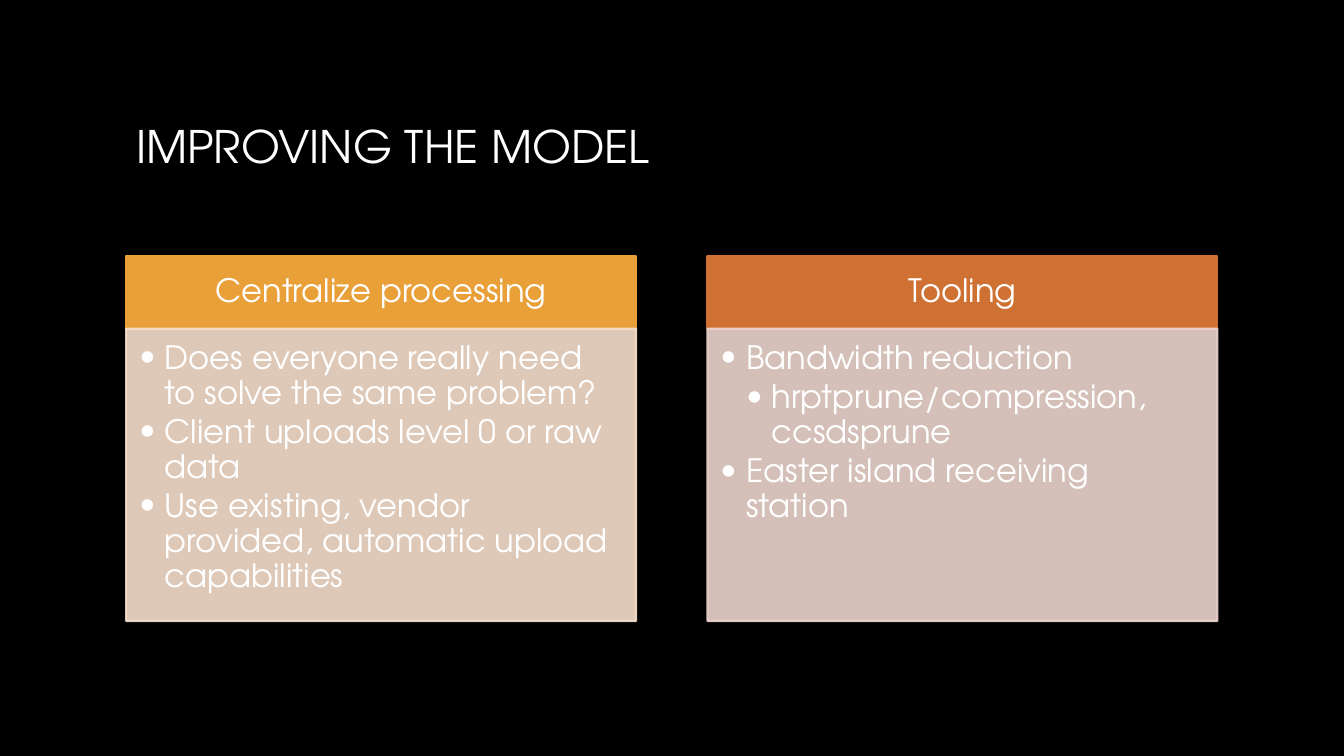
from pptx import Presentation
from pptx.dml.color import RGBColor
from pptx.enum.text import MSO_ANCHOR, MSO_AUTO_SIZE, PP_ALIGN
from pptx.oxml import parse_xml
from pptx.oxml.ns import nsdecls, qn
from pptx.oxml.xmlchemy import OxmlElement
from pptx.util import Cm, Pt

MIDDLE, TOP = MSO_ANCHOR.MIDDLE, MSO_ANCHOR.TOP
LEFT, CENTER = PP_ALIGN.LEFT, PP_ALIGN.CENTER
NO_AUTOFIT = MSO_AUTO_SIZE.NONE
COMPARISON_LAYOUT = 4

COLORS = {
    "background": "000000",
    "text": "FFFFFF",
    "amber": "E9A039",
    "amber_tint": "F7DFCE",
    "orange": "CF7133",
    "orange_tint": "EDD5CE",
}

# Heading, heading colour, list colour, list items as (level, text)
COLUMNS = [
    ("Centralize processing", "amber", "amber_tint", [
        (1, "Does everyone really need to solve the same problem?"),
        (1, "Client uploads level 0 or raw data"),
        (1, "Use existing, vendor provided, automatic upload capabilities"),
    ]),
    ("Tooling", "orange", "orange_tint", [
        (1, "Bandwidth reduction"),
        (2, "hrptprune/compression, ccsdsprune"),
        (1, "Easter island receiving station"),
    ]),
]
COLUMN_LEFT, COLUMN_STEP, COLUMN_WIDTH = 3.18, 14.65, 12.85
HEADING_TOP, HEADING_HEIGHT, LIST_HEIGHT = 6.45, 1.83, 7.37


class SlideBuilder:
    font_name = "TeX Gyre Adventor"
    title_size = 32
    text_size = 23
    bullet_indent = 0.64

    def __init__(self, slide):
        self.slide = slide
        fill = slide.background.fill
        fill.solid()
        fill.fore_color.rgb = self.color("background")

    def color(self, name):
        return RGBColor.from_string(COLORS[name])

    def place(self, shape, box, anchor, insets):
        shape.left, shape.top, shape.width, shape.height = map(Cm, box)
        frame = shape.text_frame
        frame.word_wrap = True
        frame.auto_size = NO_AUTOFIT
        frame.vertical_anchor = anchor
        (frame.margin_left, frame.margin_top,
         frame.margin_right, frame.margin_bottom) = map(Cm, insets)

    def paint(self, shape, color, opacity=100):
        shape.fill.solid()
        shape.fill.fore_color.rgb = self.color(color)
        shape.line.color.rgb = self.color(color)
        shape.line.width = Pt(1.5)
        if opacity < 100:
            for element in shape._element.spPr.iter(qn("a:srgbClr")):
                alpha = OxmlElement("a:alpha")
                alpha.set("val", str(opacity * 1000))
                element.append(alpha)

    def format_paragraph(self, paragraph, size, alignment, space_after=0):
        paragraph.alignment = alignment
        paragraph.line_spacing = 0.9
        paragraph.space_before = Pt(0)
        paragraph.space_after = Pt(space_after)
        for run in paragraph.runs:
            run.font.name = self.font_name
            run.font.size = Pt(size)
            run.font.bold = False
            run.font.color.rgb = self.color("text")

    def add_bullet(self, paragraph, level):
        paragraph.level = level
        properties = paragraph._p.get_or_add_pPr()
        properties.set("marL", str(Cm(self.bullet_indent * level)))
        properties.set("indent", str(-Cm(self.bullet_indent)))
        bullet_font = OxmlElement("a:buFont")
        bullet_font.set("typeface", self.font_name)
        bullet = OxmlElement("a:buChar")
        bullet.set("char", "•")
        properties.extend([bullet_font, bullet])

    def title(self, text, box):
        shape = self.slide.shapes.title
        self.place(shape, box, MIDDLE, (0.25, 0.13, 0.25, 0.13))
        shape.text_frame.text = text
        paragraph = shape.text_frame.paragraphs[0]
        self.format_paragraph(paragraph, self.title_size, LEFT)
        # Soft shadow behind the letters
        fill = paragraph.runs[0].font._element.find(qn("a:solidFill"))
        fill.addnext(parse_xml(
            f'<a:effectLst {nsdecls("a")}>'
            '<a:outerShdw blurRad="38100" dist="25400" dir="2700000">'
            '<a:srgbClr val="000000"><a:alpha val="40000"/></a:srgbClr>'
            '</a:outerShdw></a:effectLst>'))

    def heading(self, index, text, box, color):
        shape = self.slide.placeholders[index]
        self.place(shape, box, MIDDLE, (0.46, 0.25, 0.46, 0.25))
        self.paint(shape, color)
        shape.text_frame.text = text
        self.format_paragraph(shape.text_frame.paragraphs[0], self.text_size, CENTER)

    def bullet_list(self, index, items, box, color):
        shape = self.slide.placeholders[index]
        self.place(shape, box, TOP, (0.33, 0.33, 0.46, 0.51))
        self.paint(shape, color, opacity=90)
        frame = shape.text_frame
        frame.text = "\n".join(text for _, text in items)
        for paragraph, (level, _) in zip(frame.paragraphs, items):
            self.format_paragraph(paragraph, self.text_size, LEFT, space_after=3.2)
            self.add_bullet(paragraph, level)


def main():
    presentation = Presentation()
    presentation.slide_width, presentation.slide_height = Cm(33.87), Cm(19.05)
    layout = presentation.slide_layouts[COMPARISON_LAYOUT]
    builder = SlideBuilder(presentation.slides.add_slide(layout))

    # Title
    builder.title("IMPROVING THE MODEL", (COLUMN_LEFT, 1.7, 27.51, 4.09))

    # Two columns, each a heading above a list
    for number, (heading, color, tint, items) in enumerate(COLUMNS):
        left = COLUMN_LEFT + number * COLUMN_STEP
        index = 1 + 2 * number
        builder.heading(index, heading,
                        (left, HEADING_TOP, COLUMN_WIDTH, HEADING_HEIGHT), color)
        builder.bullet_list(index + 1, items,
                            (left, HEADING_TOP + HEADING_HEIGHT, COLUMN_WIDTH, LIST_HEIGHT), tint)

    presentation.save("out.pptx")


if __name__ == "__main__":
    main()
